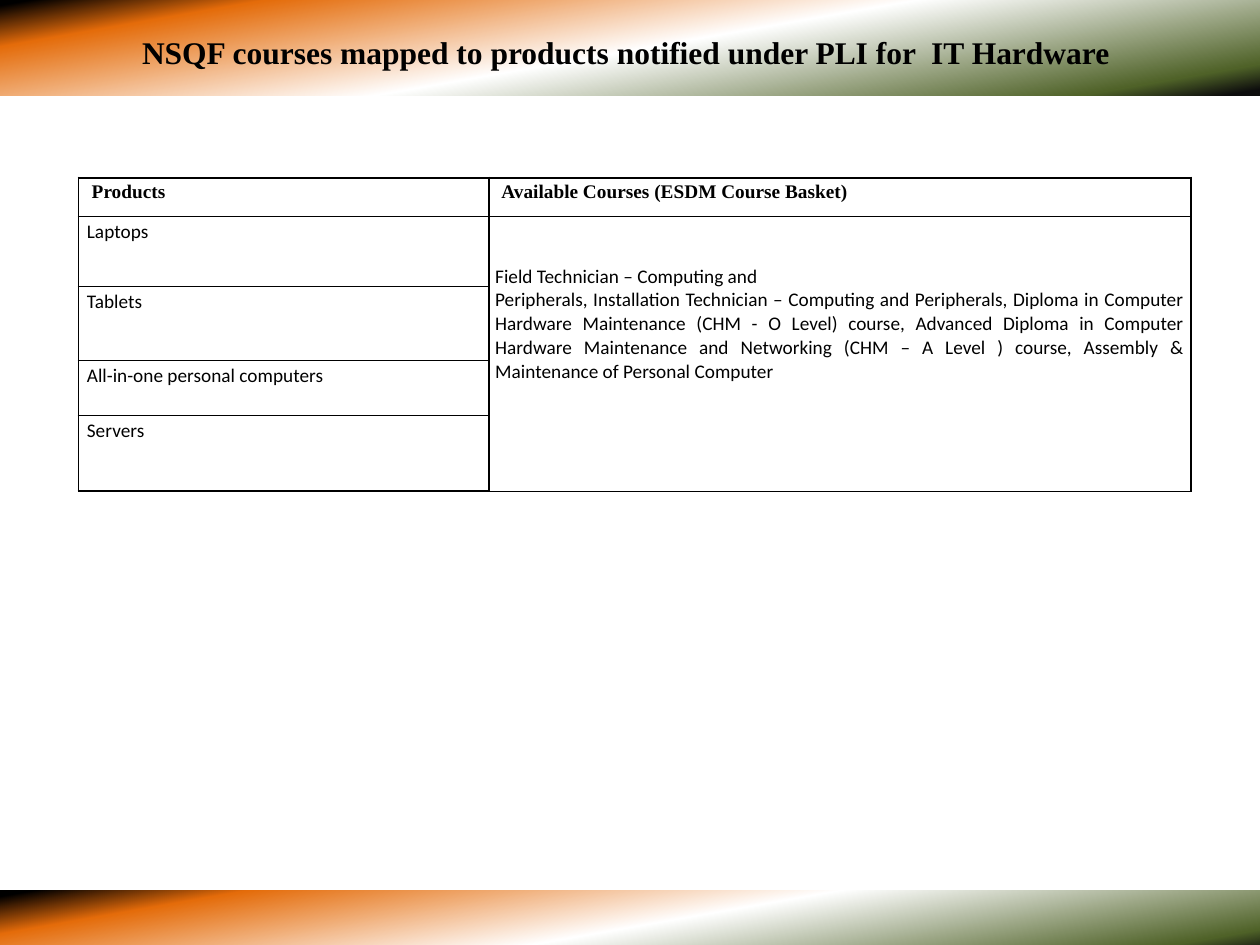
from lxml.etree import SubElement
from pptx import Presentation
from pptx.dml.color import RGBColor
from pptx.enum.shapes import MSO_SHAPE as SHAPE
from pptx.enum.text import PP_ALIGN as ALIGN
from pptx.oxml import parse_xml
from pptx.oxml.ns import nsdecls, qn
from pptx.util import Inches, Pt

SERIF, SANS = "Times New Roman", "Calibri"
BLACK = "000000"
BAND_STOPS = [(2, "0D0D0D"), (10, "4F6228"), (49, "FFFFFF"), (85, "E46C0A"), (98, BLACK)]
BAND_ANGLE = 260
COLS = [3.26, 5.57]
ROWS = [0.31, 0.55, 0.59, 0.44, 0.6]
HEADERS = [" Products", " Available Courses (ESDM Course Basket)"]
PRODUCTS = ["Laptops", "Tablets", "All-in-one personal computers", "Servers"]
COURSES = [
    "Field Technician – Computing and",
    "Peripherals, Installation Technician – Computing and Peripherals, "
    "Diploma in Computer Hardware Maintenance (CHM - O Level) course, "
    "Advanced Diploma in Computer Hardware Maintenance and Networking "
    "(CHM – A Level ) course, Assembly & Maintenance of Personal Computer",
]
THIN, THICK = 0.5, 1.25


def color(value):
    return RGBColor.from_string(value)


def write(tf, texts, font, size, bold=False, align=ALIGN.LEFT, spacing=None):
    for i, text in enumerate(texts):
        p = tf.add_paragraph() if i else tf.paragraphs[0]
        p.alignment = align
        p.line_spacing = spacing
        r = p.add_run()
        r.text = text
        r.font.name = font
        r.font.size = Pt(size)
        r.font.bold = bold
        r.font.color.rgb = color(BLACK)


def add_band(s, x, y, w, h):
    sp = s.shapes.add_shape(SHAPE.RECTANGLE, Inches(x), Inches(y), Inches(w), Inches(h))
    sp.shadow.inherit = False
    sp.line.fill.background()
    grad = parse_xml(f'<a:gradFill {nsdecls("a")} rotWithShape="1"/>')
    stops = SubElement(grad, qn("a:gsLst"))
    for pos, value in BAND_STOPS:
        stop = SubElement(stops, qn("a:gs"), pos=str(pos * 1000))
        SubElement(stop, qn("a:srgbClr"), val=value)
    SubElement(grad, qn("a:lin"), ang=str(BAND_ANGLE * 60000), scaled="0")
    sp._element.spPr.find(qn("a:prstGeom")).addnext(grad)


def add_title(s, x, y, w, h):
    sp = s.shapes.add_textbox(Inches(x), Inches(y), Inches(w), Inches(h))
    sp.text_frame.word_wrap = True
    title = "NSQF courses mapped to products notified under PLI for  IT Hardware "
    write(sp.text_frame, [title], SERIF, 18, bold=True, align=ALIGN.CENTER)


def set_borders(cell, widths):
    tc_pr = cell._tc.get_or_add_tcPr()
    for i, (side, width) in enumerate(zip("LRTB", widths)):
        ln = parse_xml(
            f'<a:ln{side} {nsdecls("a")} w="{Pt(width)}"><a:solidFill>'
            f'<a:srgbClr val="{BLACK}"/></a:solidFill></a:ln{side}>'
        )
        tc_pr.insert(i, ln)


def format_cell(cell, row, col):
    cell.fill.background()
    cell.margin_left = cell.margin_right = Inches(0.07)
    cell.margin_top = cell.margin_bottom = 0
    left = THICK if col else THIN
    top = THIN if row else THICK
    bottom = THICK if row == len(ROWS) - 1 else THIN
    set_borders(cell, [left, THICK, top, bottom])


def add_course_table(s, x, y, w, h):
    frame = s.shapes.add_table(len(ROWS), len(COLS), Inches(x), Inches(y), Inches(w), Inches(h))
    table = frame.table
    table.first_row = table.horz_banding = False
    for col, width in zip(table.columns, COLS):
        col.width = Inches(width)
    for i, height in enumerate(ROWS):
        table.rows[i].height = Inches(height)
        for j in range(len(COLS)):
            format_cell(table.cell(i, j), i, j)
    for j, text in enumerate(HEADERS):
        write(table.cell(0, j).text_frame, [text], SERIF, 11, bold=True, spacing=1.15)
    for i, text in enumerate(PRODUCTS, 1):
        write(table.cell(i, 0).text_frame, [text], SANS, 11, spacing=1.15)
    courses = table.cell(1, 1)
    courses.merge(table.cell(len(ROWS) - 1, 1))
    courses.margin_left = courses.margin_right = Inches(0.05)
    courses.margin_top = Inches(0.38)
    write(courses.text_frame, COURSES, SANS, 11, align=ALIGN.JUSTIFY)


def main():
    prs = Presentation()
    prs.slide_width, prs.slide_height = Inches(10), Inches(7.5)
    s = prs.slides.add_slide(prs.slide_layouts[6])
    add_band(s, -0.02, 7.07, 10.02, 0.54)
    add_band(s, 0, -0.01, 10.02, 0.77)
    add_course_table(s, 0.62, 1.41, sum(COLS), sum(ROWS))
    add_title(s, 0.39, 0.21, 9.22, 0.4)
    prs.save("out.pptx")


if __name__ == "__main__":
    main()
